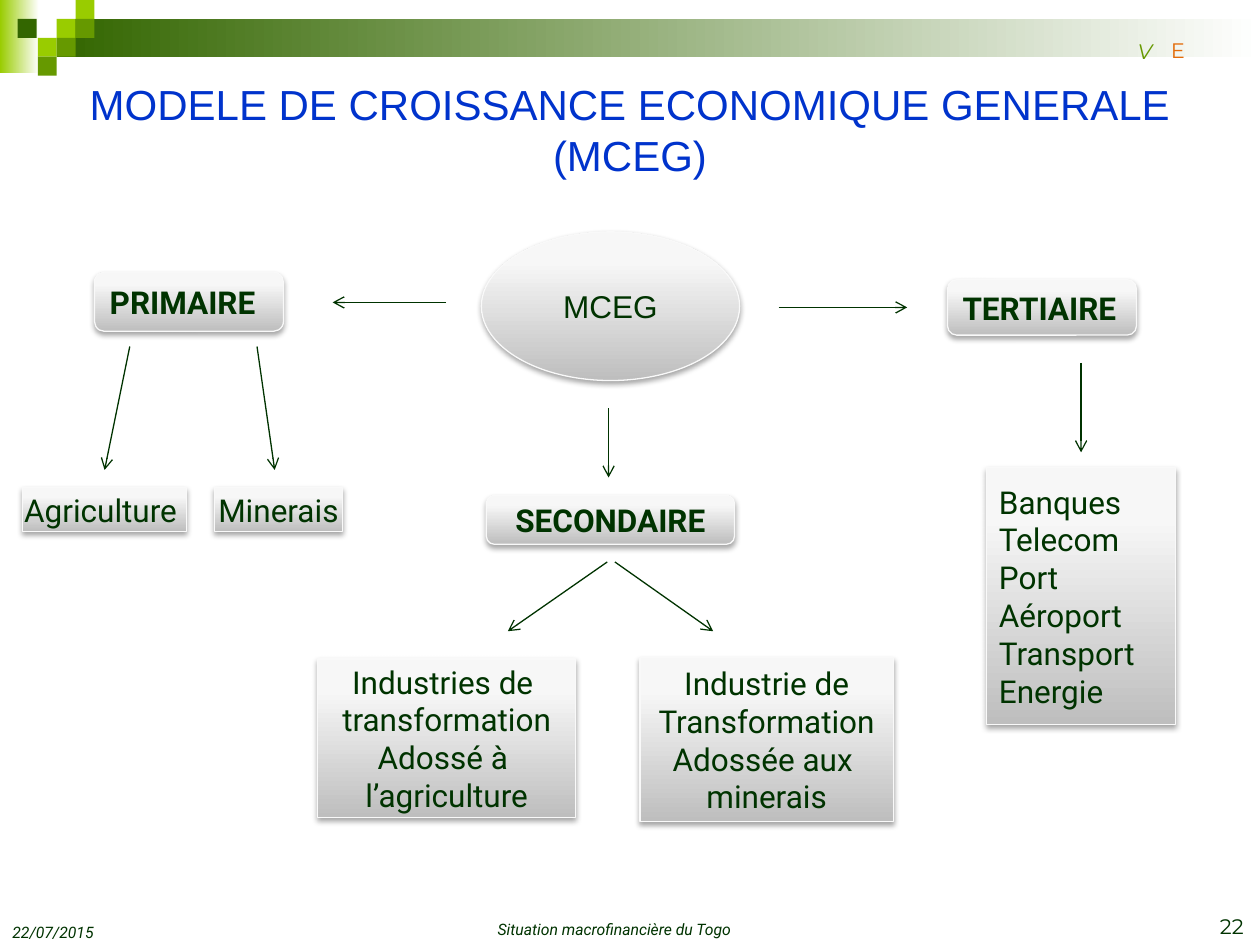
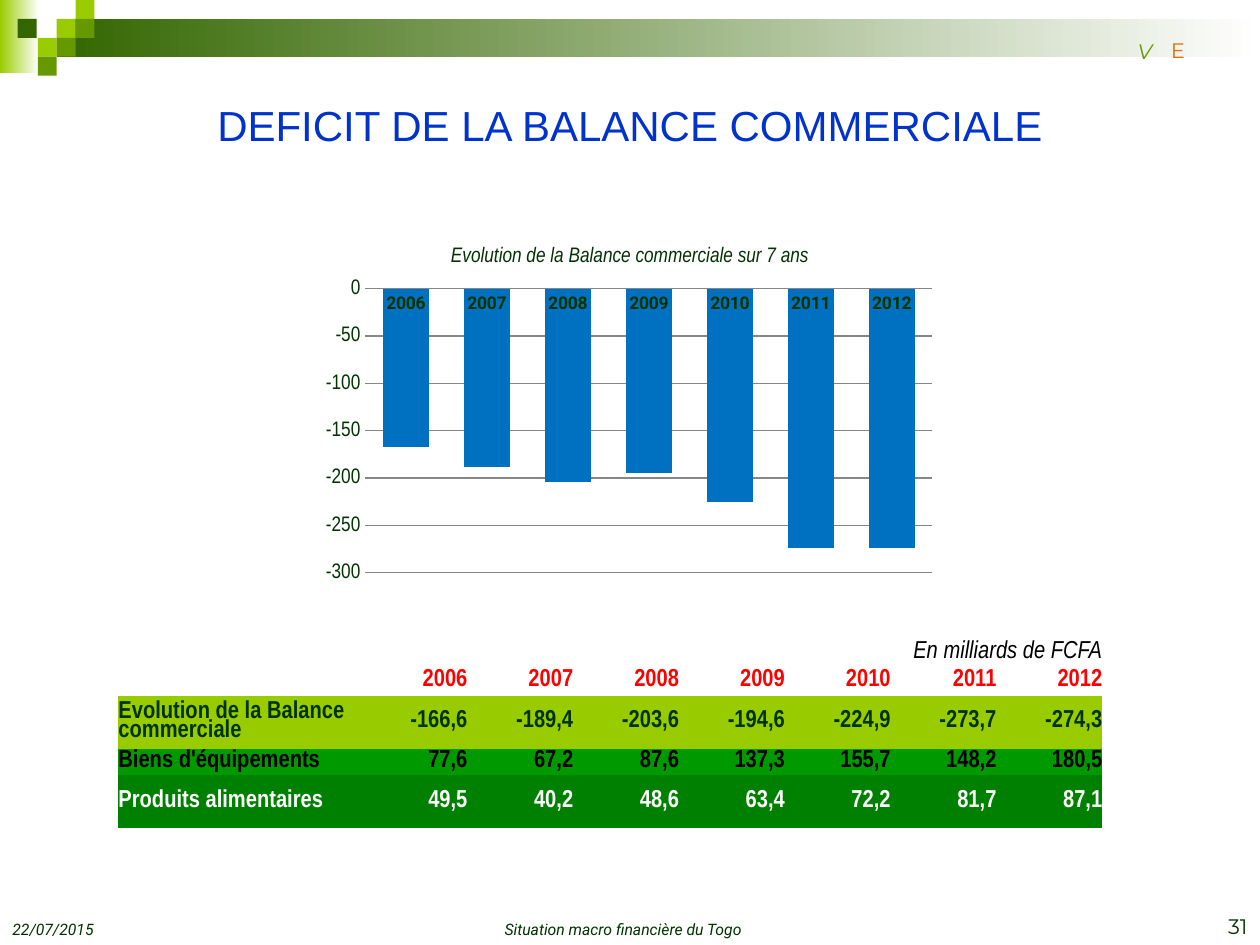
import lxml.etree
import pptx
import pptx.chart.data
import pptx.dml.color
import pptx.enum.chart
import pptx.enum.shapes
import pptx.enum.text
import pptx.oxml
import pptx.oxml.ns
import pptx.util

Inches, Pt = pptx.util.Inches, pptx.util.Pt
Align, Anchor = pptx.enum.text.PP_ALIGN, pptx.enum.text.MSO_ANCHOR
Shape = pptx.enum.shapes.MSO_SHAPE
qn = pptx.oxml.ns.qn

DARK, MID, LIME, WHITE = "003300", "669900", "99CC00", "FFFFFF"
FOREST, TITLE_BLUE = "336600", "0033CC"
BODY, HEADING, NARROW, NUMBER = "Roboto", "Arial", "Arial Narrow", "Montserrat"


def color(hex_string):
    return pptx.dml.color.RGBColor.from_string(hex_string)


def write(frame, text, font, size, hex_string=DARK, align=Align.LEFT,
          anchor=Anchor.MIDDLE, wrap=True, bold=False, italic=False):
    frame.text = text
    frame.word_wrap = wrap
    frame.vertical_anchor = anchor
    for para in frame.paragraphs:
        para.alignment = align
        for span in para.runs:
            span.font.name, span.font.size = font, Pt(size)
            span.font.bold, span.font.italic = bold, italic
            span.font.color.rgb = color(hex_string)


deck = pptx.Presentation()
deck.slide_width, deck.slide_height = Inches(10), Inches(7.5)

# Shared frame: title, top band, mosaic, initials and footer
bands = [(0, 0, 0.31, 0.58, LIME), (0.45, 0.15, 9.55, 0.3, FOREST)]
tiles = [(0.45, 0.15, LIME), (0.6, 0, LIME), (0.6, 0.15, MID), (0.3, 0.3, LIME),
         (0.14, 0.15, FOREST), (0.45, 0.3, MID), (0.3, 0.45, MID)]
initials = [("V", 8.93, 0.26, 0.27, MID, True), ("E", 9.2, 0.25, 0.19, "E36C0A", False)]
# title, title height, footer, footer left, number, number left, date top
pages = [
    ("MODELE DE CROISSANCE ECONOMIQUE GENERALE (MCEG)", 1.05,
     "Situation macrofinancière du Togo", 3.29, "22", 7.64, 7),
    ("DEFICIT DE LA BALANCE COMMERCIALE", 0.98,
     "Situation macro financière du Togo", 3.36, "31", 7.67, 6.98),
]
for title, title_height, footer, footer_left, number, number_left, date_top in pages:
    slide = deck.slides.add_slide(deck.slide_layouts[5])
    heading = slide.shapes.title
    heading.left, heading.top = Inches(0.5), Inches(0.5)
    heading.width, heading.height = Inches(9), Inches(title_height)
    write(heading.text_frame, title, HEADING, 24, TITLE_BLUE, Align.CENTER)
    heading.text_frame.auto_size = pptx.enum.text.MSO_AUTO_SIZE.NONE

    for left, top, width, height, start in bands:
        band = slide.shapes.add_shape(Shape.RECTANGLE, Inches(left), Inches(top),
                                      Inches(width), Inches(height))
        band.shadow.inherit = False
        band.line.fill.background()
        band.fill.gradient()
        band.fill.gradient_angle = 0
        for stop, shade in zip(band.fill.gradient_stops, (start, WHITE)):
            stop.color.rgb = color(shade)
    for left, top, shade in tiles:
        tile = slide.shapes.add_shape(Shape.RECTANGLE, Inches(left), Inches(top),
                                      Inches(0.15), Inches(0.15))
        tile.shadow.inherit = False
        tile.line.fill.background()
        tile.fill.solid()
        tile.fill.fore_color.rgb = color(shade)

    for letter, left, top, width, shade, italic in initials:
        box = slide.shapes.add_textbox(Inches(left), Inches(top), Inches(width), Inches(0.16))
        write(box.text_frame, letter, NUMBER, 12, shade, Align.CENTER, Anchor.TOP,
              wrap=False, italic=italic)

    for text, left, top, width, height, font, size, align, italic in [
        (footer, footer_left, 7, 3.17, 0.5, BODY, 9, Align.CENTER, True),
        (number, number_left, 7, 2.33, 0.5, NUMBER, 12, Align.RIGHT, False),
        ("22/07/2015", 0, date_top, 2.33, 0.52, BODY, 9, Align.LEFT, True),
    ]:
        box = slide.shapes.add_textbox(Inches(left), Inches(top), Inches(width), Inches(height))
        write(box.text_frame, text, font, size, DARK, align, Anchor.BOTTOM, italic=italic)

model_slide, deficit_slide = deck.slides

# Growth model: sector boxes
ROUND, RECT = Shape.ROUNDED_RECTANGLE, Shape.RECTANGLE
boxes = [
    (Shape.OVAL, 3.82, 1.84, 2.05, 1.18, "MCEG", HEADING, Align.CENTER),
    (ROUND, 0.75, 2.16, 1.5, 0.47, "PRIMAIRE", BODY, Align.LEFT),
    (ROUND, 3.86, 3.93, 1.97, 0.39, "SECONDAIRE", BODY, Align.CENTER),
    (ROUND, 7.52, 2.22, 1.5, 0.44, "TERTIAIRE", BODY, Align.LEFT),
    (RECT, 0.18, 3.87, 1.3, 0.35, "Agriculture ", BODY, Align.CENTER),
    (RECT, 1.7, 3.87, 1.02, 0.35, "Minerais", BODY, Align.CENTER),
    (RECT, 2.52, 5.23, 2.05, 1.26,
     "Industries de \ntransformation\nAdossé à \nl’agriculture", BODY, Align.CENTER),
    (RECT, 5.08, 5.22, 2.01, 1.3,
     "Industrie de\nTransformation\nAdossée aux \nminerais", BODY, Align.CENTER),
    (RECT, 7.83, 3.71, 1.5, 2.04,
     "Banques\nTelecom\nPort\nAéroport\nTransport\nEnergie", BODY, Align.LEFT),
]
SHADOW = (
    '<a:outerShdw xmlns:a="http://schemas.openxmlformats.org/drawingml/2006/main" '
    'blurRad="40000" dist="23000" dir="5400000" rotWithShape="0">'
    '<a:srgbClr val="000000"><a:alpha val="35000"/></a:srgbClr></a:outerShdw>'
)
for kind, left, top, width, height, text, font, align in boxes:
    box = model_slide.shapes.add_shape(kind, Inches(left), Inches(top),
                                       Inches(width), Inches(height))
    box.fill.gradient()
    box.fill.gradient_angle = 90
    for stop, shade, position in zip(box.fill.gradient_stops, ("BEBEBE", "F7F7F7"), (0, 0.8)):
        stop.color.rgb = color(shade)
        stop.position = position
    box.line.color.rgb = color("F9F9F9")
    box.line.width = Pt(0.75)
    box.shadow.inherit = False
    effects = box.element.spPr.find(qn("a:effectLst"))
    effects.append(pptx.oxml.parse_xml(SHADOW))
    write(box.text_frame, text, font, 18, DARK, align, wrap=False, bold=kind == ROUND)

# Growth model: arrows
arrows = [
    (3.54, 2.4, 2.64, 2.4), (6.18, 2.44, 7.2, 2.44), (4.83, 3.24, 4.83, 3.79),
    (1.03, 2.75, 0.83, 3.73), (2.04, 2.75, 2.18, 3.73), (8.58, 2.88, 8.58, 3.59),
    (4.82, 4.46, 4.03, 5.01), (4.88, 4.46, 5.66, 5.01),
]
for ends in arrows:
    arrow = model_slide.shapes.add_connector(
        pptx.enum.shapes.MSO_CONNECTOR.STRAIGHT, *[Inches(value) for value in ends])
    arrow.line.color.rgb = color(DARK)
    arrow.line.width = Pt(0.75)
    lxml.etree.SubElement(arrow.line._get_or_add_ln(), qn("a:tailEnd"), type="arrow")
    lxml.etree.SubElement(arrow.element.spPr, qn("a:effectLst"))

# Trade balance: chart
years = [str(year) for year in range(2006, 2013)]
chart_data = pptx.chart.data.CategoryChartData()
chart_data.categories = years
chart_data.add_series("Series 1", (-167, -189, -204, -195, -225, -274, -274))
chart = deficit_slide.shapes.add_chart(
    pptx.enum.chart.XL_CHART_TYPE.COLUMN_CLUSTERED,
    Inches(2.5), Inches(1.8), Inches(5), Inches(2.89), chart_data).chart
chart.has_legend = False
chart.font.name, chart.font.size = HEADING, Pt(10)
chart.font.color.rgb = color(DARK)
chart.has_title = True
write(chart.chart_title.text_frame, "Evolution de la Balance commerciale sur 7 ans",
      NARROW, 12, align=Align.CENTER, italic=True)

plot = chart.plots[0]
plot.gap_width = 75
plot.vary_by_categories = False
columns = plot.series[0]
columns.invert_if_negative = False
columns.format.fill.solid()
columns.format.fill.fore_color.rgb = color("0070C0")

no_tick = pptx.enum.chart.XL_TICK_MARK.NONE
for axis, font, size, bold in [(chart.category_axis, BODY, 10, True),
                               (chart.value_axis, NARROW, 12, False)]:
    axis.major_tick_mark = axis.minor_tick_mark = no_tick
    labels = axis.tick_labels.font
    labels.name, labels.size, labels.bold = font, Pt(size), bold
    labels.color.rgb = color(DARK)
chart.category_axis.format.line.color.rgb = color("868686")
amounts = chart.value_axis
amounts.minimum_scale, amounts.maximum_scale, amounts.major_unit = -300, 0, 50
amounts.format.line.fill.background()
amounts.major_gridlines.format.line.color.rgb = color("868686")
amounts.major_gridlines.format.line.width = Pt(0.75)

# Fixed place of the plot inside the chart
plot_area = plot._element.getparent()
for old_layout in plot_area.findall(qn("c:layout")):
    plot_area.remove(old_layout)
layout = lxml.etree.Element(qn("c:layout"))
manual = lxml.etree.SubElement(layout, qn("c:manualLayout"))
for name, value in [("layoutTarget", "inner"), ("xMode", "edge"), ("yMode", "edge"),
                    ("x", "0.08"), ("y", "0.17"), ("w", "0.9"), ("h", "0.78")]:
    lxml.etree.SubElement(manual, qn("c:" + name), val=value)
plot_area.insert(0, layout)

# Trade balance: table, one (text, fill, font colour) set per row
rows = [
    (0.21, None, "000000", ["En milliards de FCFA"] + [""] * 7),
    (0.21, None, "FF0000", [""] + years),
    (0.42, LIME, DARK, ["Evolution de la Balance commerciale", "-166,6", "-189,4",
                        "-203,6", "-194,6", "-224,9", "-273,7", "-274,3"]),
    (0.21, "009900", "000000", ["Biens d'équipements", "77,6", "67,2", "87,6",
                                "137,3", "155,7", "148,2", "180,5"]),
    (0.42, "008000", WHITE, ["Produits alimentaires", "49,5", "40,2", "48,6",
                             "63,4", "72,2", "81,7", "87,1"]),
]
table = deficit_slide.shapes.add_table(
    len(rows), 8, Inches(0.94), Inches(5.08), Inches(7.84), Inches(1.47)).table
table.first_row = table.horz_banding = False
plain_style = "{2D5ABB26-0587-4C30-8999-92F81FD0307C}"
table._tbl.tblPr.find(qn("a:tableStyleId")).text = plain_style
for index, column in enumerate(table.columns):
    column.width = Inches(0.84 if index else 1.93)
for row_index, (height, fill, shade, texts) in enumerate(rows):
    table.rows[row_index].height = Inches(height)
    for column_index, text in enumerate(texts):
        cell = table.cell(row_index, column_index)
        cell.margin_left = cell.margin_right = cell.margin_top = cell.margin_bottom = 0
        cell.vertical_anchor = Anchor.MIDDLE
        if fill:
            cell.fill.solid()
            cell.fill.fore_color.rgb = color(fill)
        else:
            cell.fill.background()
        cell.text = text
        para = cell.text_frame.paragraphs[0]
        para.line_spacing = 0.8
        para.alignment = Align.RIGHT if column_index or row_index == 0 else Align.LEFT
        for span in para.runs:
            span.font.name, span.font.size = NARROW, Pt(14)
            span.font.bold, span.font.italic = row_index > 0, row_index == 0
            span.font.color.rgb = color(shade)
        # Keeps empty cells as low as the filled ones
        lxml.etree.SubElement(para._p, qn("a:endParaRPr"), sz="1400")
table.cell(0, 0).merge(table.cell(0, 7))

deck.save("out.pptx")
